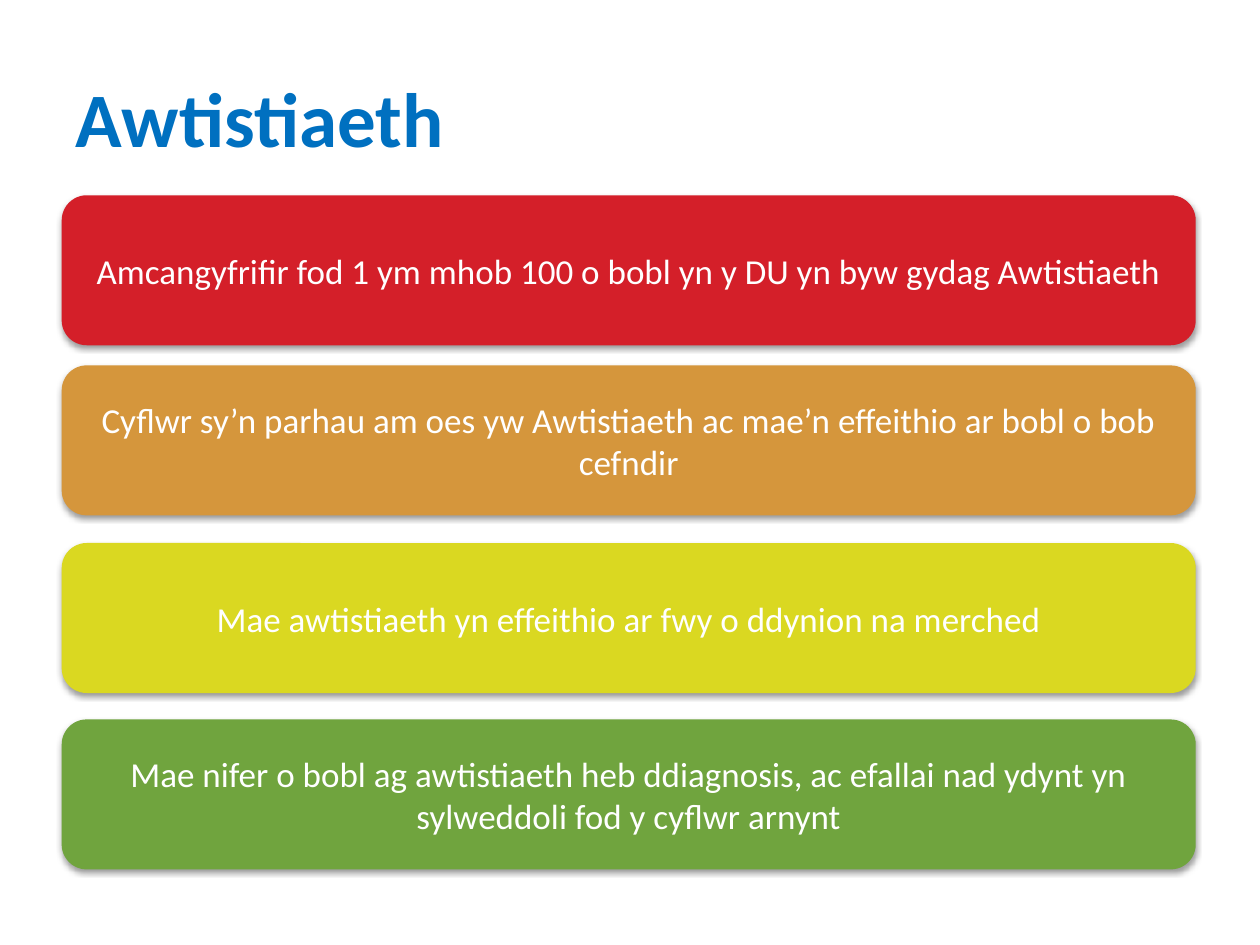
import pptx
import pptx.dml.color
import pptx.enum.shapes
import pptx.enum.text
import pptx.oxml.ns
import pptx.util
from lxml import etree

Inches, Pt = pptx.util.Inches, pptx.util.Pt

# Content: each bar has its top, fill colour and statement
TITLE = "Awtistiaeth"
BARS = [
    (1.55, "D41F29", "Amcangyfrifir fod 1 ym mhob 100 o bobl yn y DU yn byw gydag Awtistiaeth"),
    (2.90, "D5963C", "Cyflwr sy’n parhau am oes yw Awtistiaeth ac mae’n effeithio ar bobl o bob cefndir"),
    (4.31, "DAD821", "Mae awtistiaeth yn effeithio ar fwy o ddynion na merched"),
    (5.71, "70A43E", "Mae nifer o bobl ag awtistiaeth heb ddiagnosis, ac efallai nad ydynt yn "
                     "sylweddoli fod y cyflwr arnynt"),
]
BAR_LEFT, BAR_WIDTH, BAR_HEIGHT, BAR_MARGIN = 0.49, 9, 1.19, 0.08

THEME = {
    "font": "Calibri",
    "title_color": "0070C0", "title_size": 44,
    "bar_text_color": "FFFFFF", "bar_text_size": 20, "bar_space_after": 7,
    "shadow_color": "000000", "shadow_opacity": 38, "shadow_blur": 3.1, "shadow_distance": 1.6,
}


def rgb(color):
    return pptx.dml.color.RGBColor.from_string(color)


def write(shape, text, size, color, bold=False):
    """Add one vertically centred paragraph and return it."""
    frame = shape.text_frame
    frame.word_wrap = True
    frame.vertical_anchor = pptx.enum.text.MSO_ANCHOR.MIDDLE
    paragraph = frame.paragraphs[0]
    run = paragraph.add_run()
    run.text = text
    run.font.name = THEME["font"]
    run.font.size = Pt(size)
    run.font.bold = bold
    run.font.color.rgb = rgb(color)
    return paragraph


def add_shadow(shape):
    """Give the shape a soft shadow straight below it."""
    qn = pptx.oxml.ns.qn
    shape.shadow.inherit = False
    effects = shape.element.spPr.find(qn("a:effectLst"))
    shadow = etree.SubElement(effects, qn("a:outerShdw"), {
        "blurRad": str(Pt(THEME["shadow_blur"])),
        "dist": str(Pt(THEME["shadow_distance"])),
        "dir": str(90 * 60000),
        "rotWithShape": "0",
    })
    color = etree.SubElement(shadow, qn("a:srgbClr"), val=THEME["shadow_color"])
    etree.SubElement(color, qn("a:alpha"), val=str(THEME["shadow_opacity"] * 1000))


def add_bar(slide, top, fill, text):
    bar = slide.shapes.add_shape(
        pptx.enum.shapes.MSO_SHAPE.ROUNDED_RECTANGLE,
        Inches(BAR_LEFT), Inches(top), Inches(BAR_WIDTH), Inches(BAR_HEIGHT))
    bar.fill.solid()
    bar.fill.fore_color.rgb = rgb(fill)
    bar.line.fill.background()
    add_shadow(bar)
    frame = bar.text_frame
    frame.margin_left = frame.margin_right = Inches(BAR_MARGIN)
    frame.margin_top = frame.margin_bottom = Inches(BAR_MARGIN)
    paragraph = write(bar, text, THEME["bar_text_size"], THEME["bar_text_color"])
    paragraph.alignment = pptx.enum.text.PP_ALIGN.CENTER
    paragraph.space_after = Pt(THEME["bar_space_after"])


def main():
    presentation = pptx.Presentation()
    presentation.slide_width, presentation.slide_height = Inches(10), Inches(7.5)
    slide = presentation.slides.add_slide(presentation.slide_layouts[6])

    # Title
    title = slide.shapes.add_textbox(Inches(0.5), Inches(0.3), Inches(9), Inches(1.25))
    write(title, TITLE, THEME["title_size"], THEME["title_color"], bold=True)

    # Coloured bars
    for top, fill, text in BARS:
        add_bar(slide, top, fill, text)

    presentation.save("out.pptx")


if __name__ == "__main__":
    main()
